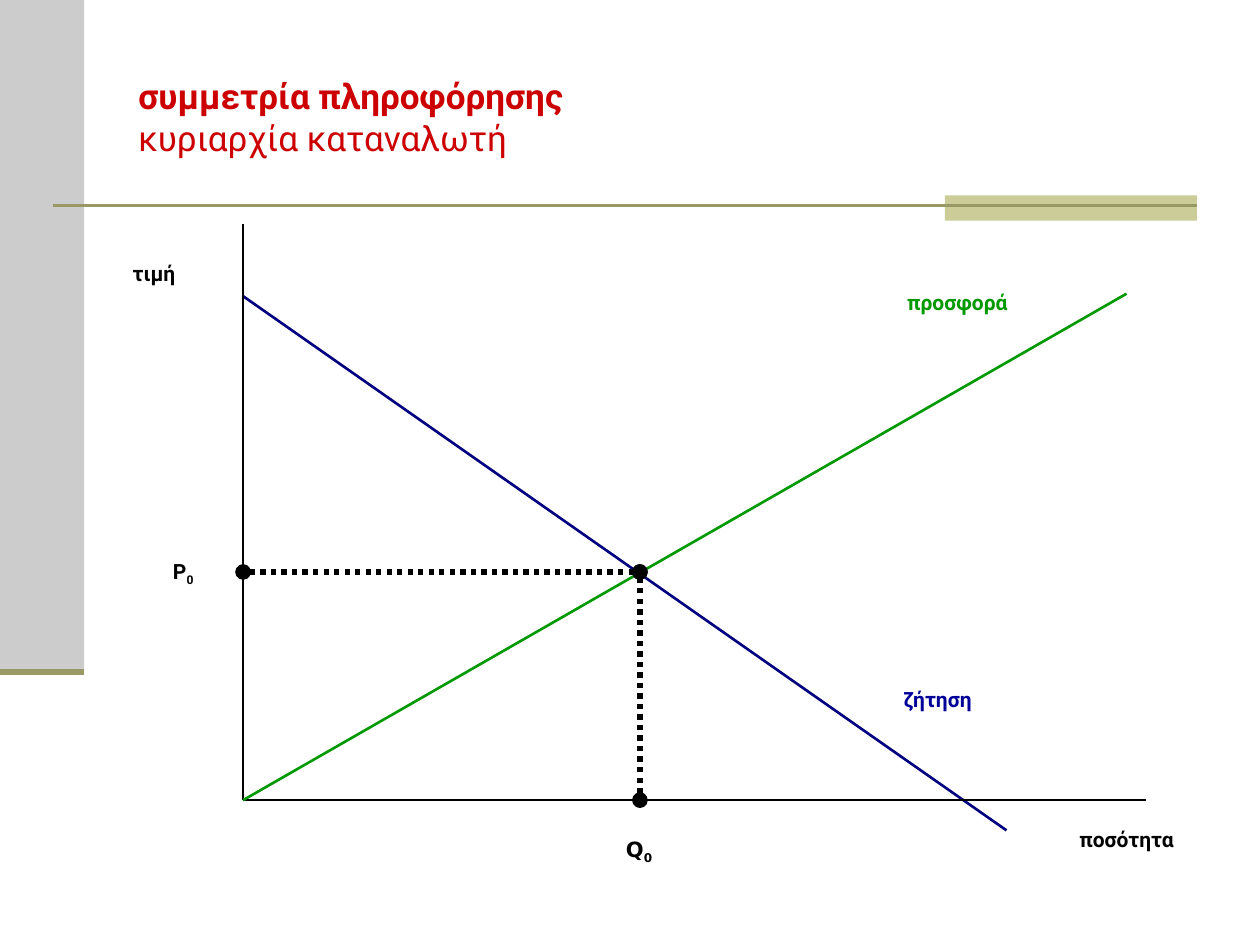
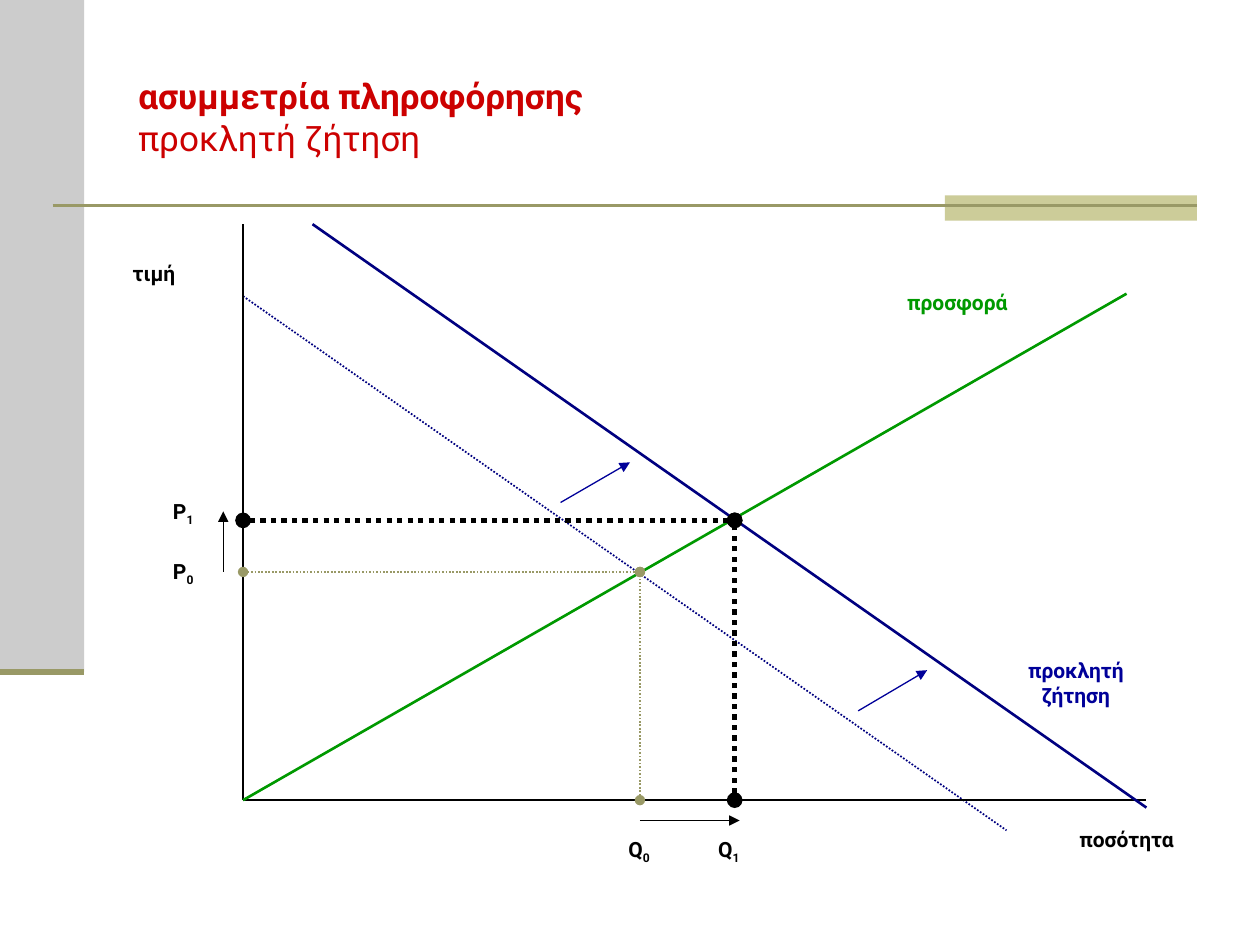
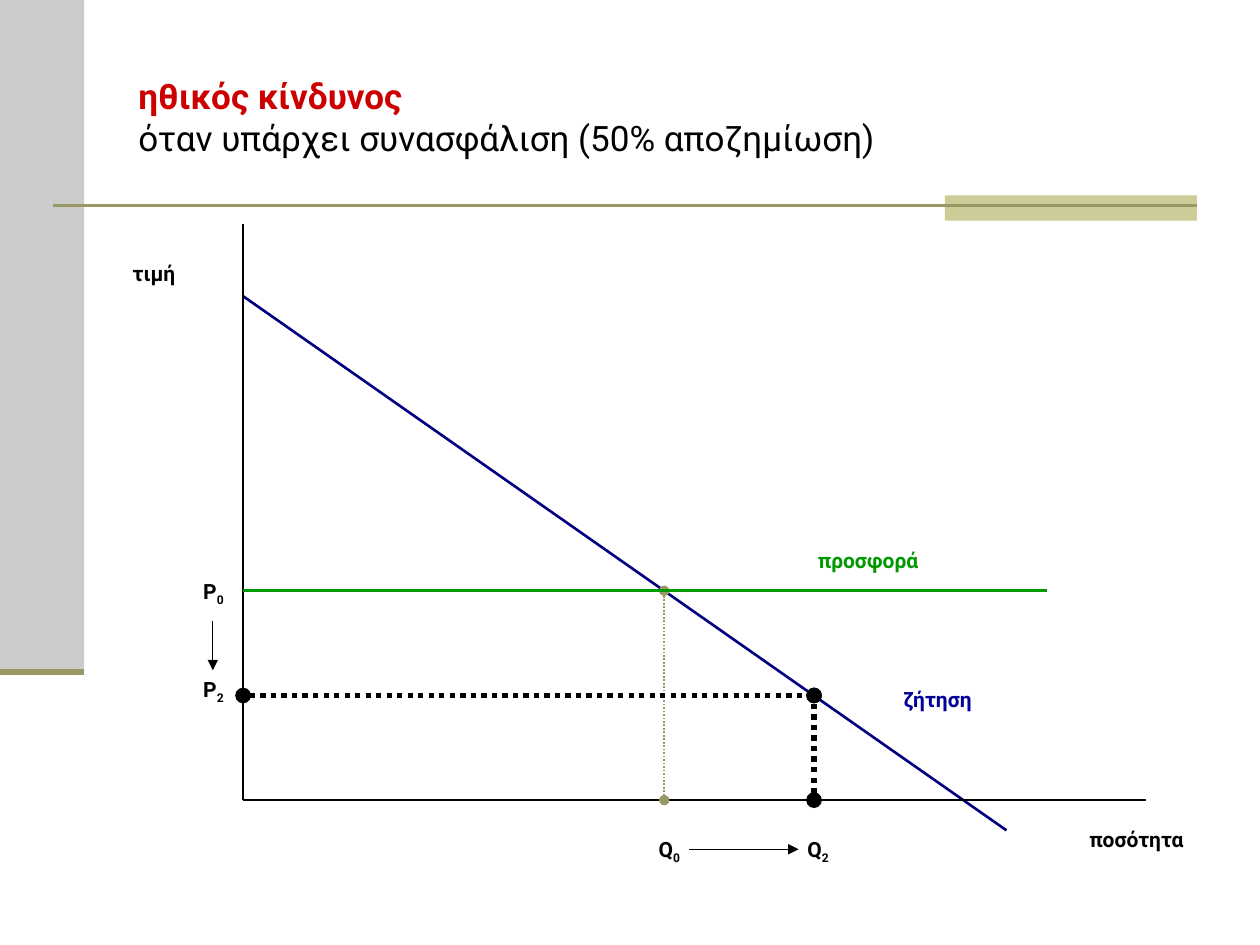
from dataclasses import dataclass, field
from typing import Any, Optional

from lxml import etree
from pptx import Presentation
from pptx import util as u
from pptx.dml.color import RGBColor
from pptx.enum import dml, shapes, text
from pptx.oxml import ns

Point = tuple[float, float]  # centimetres from the top left corner


@dataclass(frozen=True)
class Theme:
    black: str = "000000"
    red: str = "CC0000"
    navy: str = "000080"
    blue: str = "000099"
    green: str = "009900"
    olive: str = "999966"
    khaki: str = "CCCC99"
    grey: str = "CCCCCC"
    font: str = "Roboto"
    symbol_font: str = "DejaVu Sans"
    title_size: int = 20
    label_size: int = 12


THEME = Theme()


@dataclass(frozen=True)
class Stroke:
    color: str
    width: float
    dotted: bool = False
    head: Optional[str] = None
    tail: Optional[str] = None


@dataclass(frozen=True)
class Segment:
    start: Point
    end: Point
    stroke: Stroke


@dataclass(frozen=True)
class Label:
    words: str
    left: float
    top: float
    width: float = 3.2
    height: float = 0.76
    color: str = THEME.black
    subscript: str = ""
    font: str = THEME.font


@dataclass(frozen=True)
class Diagram:
    title: str
    subtitle: str
    segments: list[Segment]
    labels: list[Label]
    subtitle_color: str = field(default=THEME.red)


CURVE_WIDTH = 1.5
AXIS = Stroke(THEME.black, 1)
DEMAND = Stroke(THEME.navy, CURVE_WIDTH)
OLD_DEMAND = Stroke(THEME.navy, 1, dotted=True)
SUPPLY = Stroke(THEME.green, CURVE_WIDTH)
GUIDE = Stroke(THEME.black, 3, True, "oval", "oval")
OLD_GUIDE = Stroke(THEME.olive, 1, True, "oval", "oval")
MOVE = Stroke(THEME.black, 0.75, tail="triangle")
SHIFT = Stroke(THEME.blue, 0.75, tail="triangle")

ORIGIN: Point = (4.9, 16.13)
AXES = [
    Segment(ORIGIN, (ORIGIN[0], 4.52), AXIS),
    Segment(ORIGIN, (23.11, ORIGIN[1]), AXIS),
]
RISING_SUPPLY = Segment(ORIGIN, (22.71, 5.92), SUPPLY)
PRICE_LABEL = Label("τιμή", 1.9, 5.13, 2.41)
DEMAND_LABEL = Label("ζήτηση", 17.3, 13.72, color=THEME.blue)
QUANTITY_TOP = 16.74
FIRST_BALANCE: Point = (12.9, 11.53)
SECOND_BALANCE: Point = (14.81, 10.49)
INSURED_POINT: Point = (16.41, 14.02)
FIXED_PRICE = 11.91


def demand(stroke: Stroke) -> Segment:
    return Segment((ORIGIN[0], 5.97), (20.29, 16.74), stroke)


def drop(point: Point, stroke: Stroke) -> Segment:
    """Guide from the quantity axis up to a point."""
    return Segment((point[0], ORIGIN[1]), point, stroke)


def guides(point: Point, stroke: Stroke) -> list[Segment]:
    """Guides from both axes to a point."""
    return [drop(point, stroke), Segment((ORIGIN[0], point[1]), point, stroke)]


def quantity_label(left: float) -> Label:
    return Label("ποσότητα", left, 16.54)


def supply_label(left: float, top: float) -> Label:
    return Label("προσφορά", left, top, color=THEME.green)


def price(index: str, left: float, top: float) -> Label:
    return Label("P", left, top, 1.19, subscript=index)


def quantity(index: str, left: float, font: str = THEME.font) -> Label:
    return Label("Q", left, QUANTITY_TOP, 1.19, subscript=index, font=font)


DIAGRAMS = [
    Diagram(
        "συμμετρία πληροφόρησης",
        "κυριαρχία καταναλωτή",
        [demand(DEMAND), *AXES, RISING_SUPPLY, *guides(FIRST_BALANCE, GUIDE)],
        [
            PRICE_LABEL,
            quantity_label(21.11),
            DEMAND_LABEL,
            supply_label(17.7, 5.72),
            price("0", 3.1, 11.13),
            quantity("0", 12.29, THEME.symbol_font),
        ],
    ),
    Diagram(
        "ασυμμετρία πληροφόρησης",
        "προκλητή ζήτηση",
        [
            demand(OLD_DEMAND),
            *AXES,
            RISING_SUPPLY,
            *guides(FIRST_BALANCE, OLD_GUIDE),
            Segment((6.3, 4.52), (23.11, 16.28), DEMAND),
            Segment((17.3, 14.33), (18.69, 13.51), SHIFT),
            Segment((11.3, 10.13), (12.7, 9.32), SHIFT),
            *guides(SECOND_BALANCE, GUIDE),
            Segment((4.5, 11.53), (4.5, 10.31), MOVE),
            Segment((12.9, 16.54), (14.91, 16.54), MOVE),
        ],
        [
            PRICE_LABEL,
            quantity_label(21.11),
            Label("προκλητή ζήτηση", 20.09, 13.13, height=1.27, color=THEME.blue),
            supply_label(17.7, 5.72),
            price("0", 3.1, 11.13),
            price("1", 3.1, 9.93),
            quantity("0", 12.29),
            quantity("1", 14.1),
        ],
    ),
    Diagram(
        "ηθικός κίνδυνος",
        "όταν υπάρχει συνασφάλιση (50% αποζημίωση)",
        [
            demand(DEMAND),
            *AXES,
            drop((13.39, FIXED_PRICE), OLD_GUIDE),
            *guides(INSURED_POINT, GUIDE),
            Segment((ORIGIN[0], FIXED_PRICE), (21.11, FIXED_PRICE), SUPPLY),
            Segment((4.29, 12.52), (4.29, 13.51), MOVE),
            Segment((13.89, 17.12), (16.1, 17.12), MOVE),
        ],
        [
            PRICE_LABEL,
            quantity_label(21.31),
            DEMAND_LABEL,
            supply_label(15.9, 10.92),
            price("0", 3.71, 11.53),
            price("2", 3.71, 13.51),
            quantity("0", 12.9),
            quantity("2", 15.9),
        ],
        THEME.black,
    ),
]


def apply(target: Any, formats: dict[str, Any]) -> None:
    for name, value in formats.items():
        setattr(target, name, value)


def draw_segment(page: Any, segment: Segment) -> None:
    stroke = segment.stroke
    ends = [u.Cm(value) for value in (*segment.start, *segment.end)]
    connector = page.shapes.add_connector(shapes.MSO_CONNECTOR.STRAIGHT, *ends)
    line = connector.line
    line.color.rgb = RGBColor.from_string(stroke.color)
    line.width = u.Pt(stroke.width)
    if stroke.dotted:
        line.dash_style = dml.MSO_LINE.ROUND_DOT
    properties = connector._element.spPr
    outline = properties.find(ns.qn("a:ln"))
    for tag, end in (("a:headEnd", stroke.head), ("a:tailEnd", stroke.tail)):
        if end:
            etree.SubElement(outline, ns.qn(tag), type=end)
    etree.SubElement(properties, ns.qn("a:effectLst"))


def draw_band(page: Any, at: tuple[float, float, float, float], color: str) -> None:
    band = page.shapes.add_shape(
        shapes.MSO_SHAPE.RECTANGLE, *(u.Cm(value) for value in at)
    )
    band.shadow.inherit = False
    band.fill.solid()
    band.fill.fore_color.rgb = RGBColor.from_string(color)
    band.line.fill.background()


def add_span(
    para: Any, words: str, size: int, color: str, bold: bool, font: str = THEME.font
) -> Any:
    span = para.add_run()
    span.text = words
    apply(span.font, {"name": font, "size": u.Pt(size), "bold": bold})
    span.font.color.rgb = RGBColor.from_string(color)
    return span


def add_box(page: Any, at: tuple[float, float, float, float]) -> Any:
    box = page.shapes.add_textbox(*(u.Cm(value) for value in at))
    box.text_frame.word_wrap = True
    return box.text_frame


def draw_label(page: Any, label: Label) -> None:
    frame = add_box(page, (label.left, label.top, label.width, label.height))
    frame.auto_size = text.MSO_AUTO_SIZE.SHAPE_TO_FIT_TEXT
    para = frame.paragraphs[0]
    para.alignment = text.PP_ALIGN.CENTER
    look = (THEME.label_size, label.color, True, label.font)
    add_span(para, label.words, *look)
    if label.subscript:
        span = add_span(para, label.subscript, *look)
        span.font._element.set("baseline", "-25000")


def draw_title(page: Any, diagram: Diagram) -> None:
    frame = add_box(page, (2.54, 0.76, 21.59, 3.18))
    frame.vertical_anchor = text.MSO_ANCHOR.MIDDLE
    para = frame.paragraphs[0]
    add_span(para, diagram.title, THEME.title_size, THEME.red, True)
    para.add_line_break()
    add_span(para, diagram.subtitle, THEME.title_size, diagram.subtitle_color, False)


def draw_frame(page: Any) -> None:
    """Side band, corner band and the two rules found on every slide."""
    draw_band(page, (0, 0, 1.7, 13.55), THEME.grey)
    draw_band(page, (19.05, 3.94, 5.08, 0.51), THEME.khaki)
    draw_segment(page, Segment((1.06, 4.14), (24.13, 4.14), Stroke(THEME.olive, 1.5)))
    draw_segment(page, Segment((0, 13.55), (1.7, 13.55), Stroke(THEME.olive, 3.5)))


def main() -> None:
    deck = Presentation()
    apply(deck, {"slide_width": u.Cm(25.4), "slide_height": u.Cm(19.05)})
    for diagram in DIAGRAMS:
        page = deck.slides.add_slide(deck.slide_layouts[6])
        draw_frame(page)
        draw_title(page, diagram)
        for segment in diagram.segments:
            draw_segment(page, segment)
        for label in diagram.labels:
            draw_label(page, label)
    deck.save("out.pptx")


if __name__ == "__main__":
    main()
